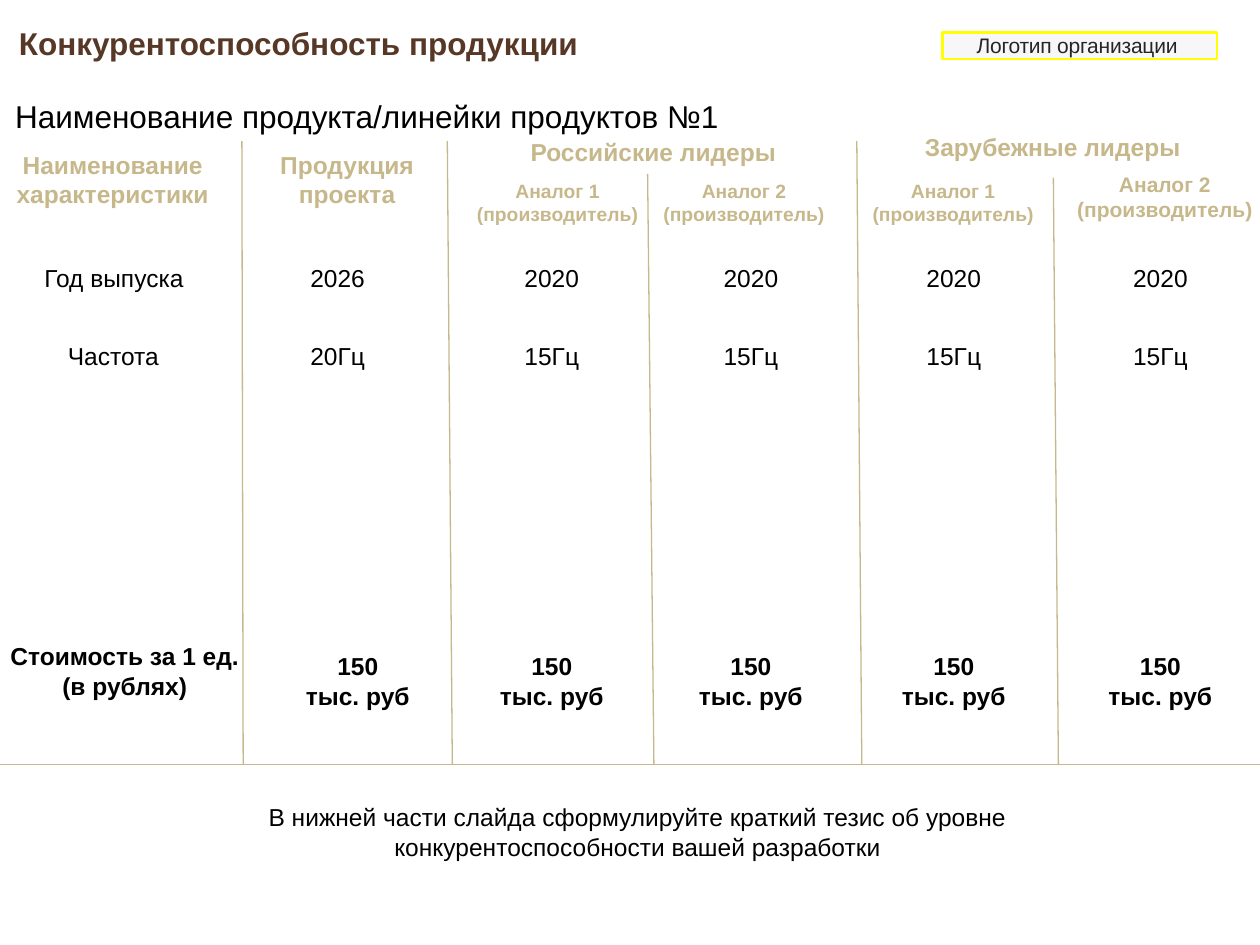
"""Build the product competitiveness comparison slide."""
import lxml.etree
import pptx
import pptx.dml.color
import pptx.enum.shapes
import pptx.enum.text
import pptx.oxml.ns
import pptx.util

Inches = pptx.util.Inches
ALIGN = pptx.enum.text.PP_ALIGN

THEME = {
    "font": "Arial", "title": "573827", "accent": "C7B88B", "body": "000000",
    "logo_text": "252525", "logo_fill": "F1F1F1", "logo_line": "FFFF00",
    "large": 18, "normal": 14, "medium": 12, "small": 11, "rule": 0.75, "frame": 1.56,
}

TITLE = "Конкурентоспособность продукции"
LOGO = "Логотип организации"
PRODUCT = "Наименование продукта/линейки продуктов №1"
SUMMARY = ("В нижней части слайда сформулируйте краткий тезис об уровне "
           "конкурентоспособности вашей разработки")

HEADERS = [
    ("Наименование характеристики", (-0.34, 1.14, 2.47, 0.57), "normal"),
    ("Продукция проекта", (1.87, 1.14, 1.77, 0.57), "normal"),
    ("Российские лидеры", (3.95, 1.04, 2.47, 0.34), "normal"),
    ("Зарубежные лидеры", (7.12, 1.0, 2.47, 0.34), "normal"),
    ("Аналог 1\n(производитель)", (3.19, 1.37, 2.47, 0.47), "small"),
    ("Аналог 2\n(производитель)", (4.67, 1.37, 2.47, 0.47), "small"),
    ("Аналог 1\n(производитель)", (6.33, 1.37, 2.47, 0.47), "small"),
    ("Аналог 2\n(производитель)", (8.01, 1.31, 2.47, 0.5), "medium"),
]

VALUE_CENTRES = [2.68, 4.38, 5.96, 7.57, 9.21]
COST_CENTRES = [2.84] + VALUE_CENTRES[1:]
ROWS = [
    {"label": "Год выпуска", "label_box": (0.29, 2.04, 1.23, 0.34), "top": 2.04,
     "size": (0.54, 0.34), "centres": VALUE_CENTRES, "bold": False,
     "values": ["2026", "2020", "2020", "2020", "2020"]},
    {"label": "Частота", "label_box": (0.48, 2.66, 0.84, 0.34), "top": 2.66,
     "size": (0.54, 0.34), "centres": VALUE_CENTRES, "bold": False,
     "values": ["20Гц", "15Гц", "15Гц", "15Гц", "15Гц"]},
    {"label": "Стоимость за 1 ед.\n(в рублях)", "label_box": (0.02, 5.04, 1.94, 0.57),
     "top": 5.12, "size": (0.93, 0.57), "centres": COST_CENTRES, "bold": True,
     "values": ["150\nтыс. руб"] * 5},
]

TABLE_BOTTOM = 6.07
DIVIDERS = [(1.92, 1.12, 1.93), (3.55, 1.12, 3.59), (5.14, 1.38, 5.19),
            (6.8, 1.12, 6.84), (8.36, 1.41, 8.4)]


def color(name):
    return pptx.dml.color.RGBColor.from_string(THEME[name])


def write_text(shape, text, size="normal", fill="body", bold=False,
               align=ALIGN.CENTER, wrap=True, margin=0.05):
    frame = shape.text_frame
    frame.text = text
    frame.auto_size = pptx.enum.text.MSO_AUTO_SIZE.NONE
    frame.word_wrap = wrap
    frame.vertical_anchor = pptx.enum.text.MSO_ANCHOR.TOP
    frame.margin_left = frame.margin_right = Inches(margin)
    frame.margin_top = frame.margin_bottom = Inches(margin)
    for para in frame.paragraphs:
        para.alignment = align
        for span in para.runs:
            span.font.name = THEME["font"]
            span.font.size = pptx.util.Pt(THEME[size])
            span.font.bold = bold
            span.font.color.rgb = color(fill)


def add_text(slide, text, place, **style):
    box = slide.shapes.add_textbox(*map(Inches, place))
    write_text(box, text, **style)


def add_rule(slide, *ends):
    rule = slide.shapes.add_connector(
        pptx.enum.shapes.MSO_CONNECTOR.STRAIGHT, *map(Inches, ends))
    rule.line.color.rgb = color("accent")
    rule.line.width = pptx.util.Pt(THEME["rule"])
    lxml.etree.SubElement(rule._element.spPr, pptx.oxml.ns.qn("a:effectLst"))


def add_title(slide):
    title = slide.shapes.title
    title.left, title.top, title.width, title.height = map(Inches, (0.1, 0.14, 4.6, 0.4))
    write_text(title, TITLE, size="large", fill="title", bold=True,
               align=ALIGN.LEFT, wrap=False)


def add_logo_label(slide):
    label = slide.shapes.add_shape(pptx.enum.shapes.MSO_SHAPE.RECTANGLE,
                                   *map(Inches, (7.48, 0.26, 2.18, 0.21)))
    label.shadow.inherit = False
    label.fill.solid()
    label.fill.fore_color.rgb = color("logo_fill")
    tint = label._element.spPr.find(".//" + pptx.oxml.ns.qn("a:srgbClr"))
    lxml.etree.SubElement(tint, pptx.oxml.ns.qn("a:alpha"), val="52000")
    label.line.color.rgb = color("logo_line")
    label.line.width = pptx.util.Pt(THEME["frame"])
    write_text(label, LOGO, size="medium", fill="logo_text", align=ALIGN.LEFT, margin=0)
    para = label.text_frame.paragraphs[0]
    para.space_before = pptx.util.Pt(2)
    para._p.get_or_add_pPr().set("indent", str(Inches(0.27)))
    para.runs[0].font._element.set("spc", "-10")


def add_comparison(slide):
    for text, place, size in HEADERS:
        add_text(slide, text, place, size=size, fill="accent", bold=True)
    for left, top, foot in DIVIDERS:
        add_rule(slide, left, top, foot, TABLE_BOTTOM)
    add_rule(slide, 0, TABLE_BOTTOM, 10, TABLE_BOTTOM)
    for row in ROWS:
        add_text(slide, row["label"], row["label_box"], bold=row["bold"], wrap=False)
        width, height = row["size"]
        for centre, value in zip(row["centres"], row["values"]):
            add_text(slide, value, (centre - width / 2, row["top"], width, height),
                     bold=row["bold"], wrap=False)


def main():
    deck = pptx.Presentation()
    deck.slide_width, deck.slide_height = Inches(10), Inches(7.5)
    page = deck.slides.add_slide(deck.slide_layouts.get_by_name("Title Only"))
    add_logo_label(page)
    add_title(page)
    add_text(page, PRODUCT, (0.07, 0.72, 5.87, 0.4), size="large",
             align=ALIGN.LEFT, wrap=False)
    add_comparison(page)
    add_text(page, SUMMARY, (1.52, 6.32, 7.08, 0.57))
    deck.save("out.pptx")


if __name__ == "__main__":
    main()
